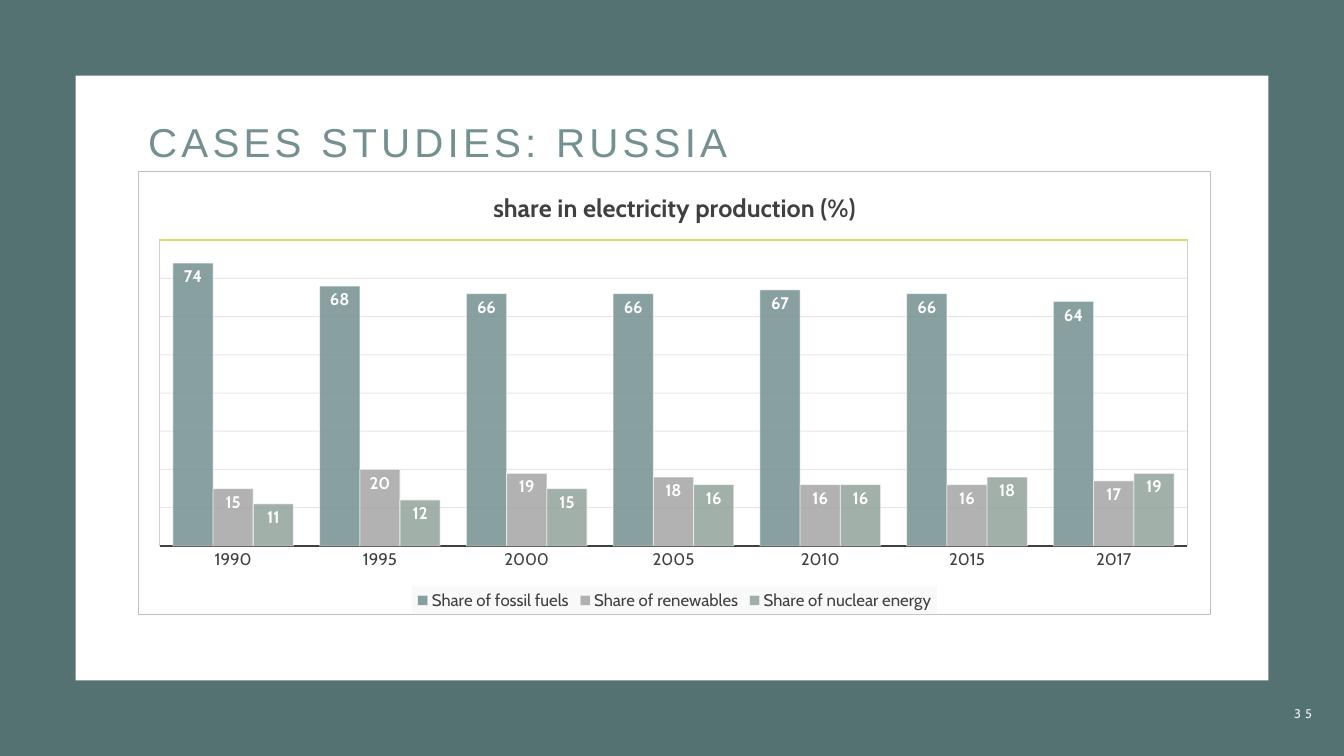
from dataclasses import dataclass

from lxml.etree import SubElement
from pptx import Presentation
from pptx.chart.data import CategoryChartData
from pptx.dml.color import RGBColor
from pptx.enum.chart import XL_CHART_TYPE as ChartType
from pptx.enum.chart import XL_LABEL_POSITION as LabelPosition
from pptx.enum.chart import XL_LEGEND_POSITION as LegendPosition
from pptx.enum.chart import XL_TICK_LABEL_POSITION as TickLabels
from pptx.enum.chart import XL_TICK_MARK as TickMark
from pptx.enum.shapes import MSO_CONNECTOR as Connector
from pptx.enum.shapes import MSO_SHAPE as Shape
from pptx.enum.text import MSO_ANCHOR as Anchor
from pptx.enum.text import MSO_AUTO_SIZE as AutoSize
from pptx.enum.text import PP_ALIGN as Align
from pptx.oxml import parse_xml
from pptx.oxml.ns import nsdecls, qn
from pptx.util import Inches, Pt


@dataclass(frozen=True)
class Theme:
    heading_font: str = "Arial"
    body_font: str = "Cabin"
    frame: str = "557272"
    paper: str = "FFFFFF"
    heading: str = "749090"
    number: str = "EEF2F0"
    text: str = "404040"
    border: str = "BFBFBF"
    plot_border: str = "D0D0D0"
    grid: str = "0D0D0D"
    legend_fill: str = "F2F2F2"
    top_line: str = "E0D764"
    bars: tuple = ("749090", "A5A5A5", "91A39B")
    heading_size: float = 28.8
    chart_title_size: float = 18
    chart_size: float = 12
    number_size: float = 9


THEME = Theme()

YEARS = ("1990", "1995", "2000", "2005", "2010", "2015", "2017")
SHARES = {
    "Share of fossil fuels": (74, 68, 66, 66, 67, 66, 64),
    "Share of renewables": (15, 20, 19, 18, 16, 16, 17),
    "Share of nuclear energy": (11, 12, 15, 16, 16, 18, 19),
}
CHART_BOX = (1.37, 1.7, 10.64, 4.4)
PLOT_BOX = (1.58, 2.38, 10.2, 3.04)


def style_font(font, size, color, name=THEME.body_font, bold=False):
    font.name = name
    font.size = Pt(size)
    font.bold = bold
    font.color.rgb = RGBColor.from_string(color)


def set_spacing(run, points):
    run._r.get_or_add_rPr().set("spc", str(points * 100))


def paint(fill, color, opacity=100):
    fill.solid()
    fill.fore_color.rgb = RGBColor.from_string(color)
    if opacity < 100:
        color_element = fill._xPr.find(qn("a:solidFill"))[0]
        SubElement(color_element, qn("a:alpha"), val=str(opacity * 1000))


def draw_line(line, color, width, opacity=100):
    line.width = Pt(width)
    paint(line.fill, color, opacity)


def add_panel(slide, box, color):
    panel = slide.shapes.add_shape(Shape.RECTANGLE, *map(Inches, box))
    panel.shadow.inherit = False
    paint(panel.fill, color)
    panel.line.fill.background()


def set_title(slide, text, box):
    title = slide.shapes.title
    title.left, title.top, title.width, title.height = map(Inches, box)
    frame = title.text_frame
    frame.text = text
    frame.auto_size = AutoSize.NONE
    frame.vertical_anchor = Anchor.MIDDLE
    paragraph = frame.paragraphs[0]
    paragraph.alignment = Align.LEFT
    paragraph.line_spacing = 0.9
    run = paragraph.runs[0]
    style_font(run.font, THEME.heading_size, THEME.heading, THEME.heading_font)
    set_spacing(run, 3)
    slide.shapes._spTree.append(title._element)  # in front of the panels


def add_slide_number(slide, text, box):
    frame = slide.shapes.add_textbox(*map(Inches, box)).text_frame
    frame.word_wrap = True
    frame.text = text
    paragraph = frame.paragraphs[0]
    paragraph.alignment = Align.RIGHT
    paragraph.space_after = Pt(6)
    run = paragraph.runs[0]
    style_font(run.font, THEME.number_size, THEME.number)
    set_spacing(run, 3)


def box_properties(line_color=None, fill_color=None, opacity=100):
    """Make the c:spPr of a chart part that python-pptx cannot format."""
    fill = "<a:noFill/>"
    if fill_color:
        fill = (f'<a:solidFill><a:srgbClr val="{fill_color}">'
                f'<a:alpha val="{opacity * 1000}"/></a:srgbClr></a:solidFill>')
    line = "<a:ln><a:noFill/></a:ln>"
    if line_color:
        line = (f'<a:ln w="{Pt(0.75)}"><a:solidFill>'
                f'<a:srgbClr val="{line_color}"/></a:solidFill></a:ln>')
    return parse_xml(f'<c:spPr {nsdecls("c", "a")}>{fill}{line}</c:spPr>')


def place_plot(plot_area):
    """Fix the inner plot area at PLOT_BOX, in fractions of the chart."""
    for layout in plot_area.findall(qn("c:layout")):
        plot_area.remove(layout)
    left, top, width, height = CHART_BOX
    plot_left, plot_top, plot_width, plot_height = PLOT_BOX
    settings = {
        "layoutTarget": "inner", "xMode": "edge", "yMode": "edge",
        "x": (plot_left - left) / width, "y": (plot_top - top) / height,
        "w": plot_width / width, "h": plot_height / height,
    }
    layout = parse_xml(f'<c:layout {nsdecls("c")}/>')
    manual = SubElement(layout, qn("c:manualLayout"))
    for name, value in settings.items():
        SubElement(manual, qn(f"c:{name}"), val=str(value))
    plot_area.insert(0, layout)


def style_series(series, color):
    paint(series.format.fill, color, 85)
    draw_line(series.format.line, THEME.paper, 0.75, 50)
    series.invert_if_negative = False
    labels = series.data_labels
    labels.show_value = True
    labels.position = LabelPosition.INSIDE_END
    style_font(labels.font, THEME.chart_size, THEME.paper, bold=True)


def style_axes(chart):
    category_axis = chart.category_axis
    category_axis.major_tick_mark = TickMark.NONE
    category_axis.tick_label_position = TickLabels.NEXT_TO_AXIS
    style_font(category_axis.tick_labels.font, THEME.chart_size, THEME.text)
    draw_line(category_axis.format.line, THEME.text, 1.5)
    value_axis = chart.value_axis
    value_axis.minimum_scale, value_axis.maximum_scale = 0, 80
    value_axis.major_unit = 10
    value_axis.visible = False
    draw_line(value_axis.major_gridlines.format.line, THEME.grid, 0.75, 10)


def add_share_chart(slide, title):
    data = CategoryChartData()
    data.categories = YEARS
    for name, values in SHARES.items():
        data.add_series(name, values)
    chart = slide.shapes.add_chart(
        ChartType.COLUMN_CLUSTERED, *map(Inches, CHART_BOX), data).chart
    style_font(chart.font, THEME.chart_size, THEME.text)

    title_frame = chart.chart_title.text_frame
    title_frame.text = title
    style_font(title_frame.paragraphs[0].runs[0].font,
               THEME.chart_title_size, THEME.text, bold=True)
    chart.chart_title.include_in_layout = False

    chart.has_legend = True
    chart.legend.position = LegendPosition.BOTTOM
    chart.legend.include_in_layout = False
    style_font(chart.legend.font, THEME.chart_size, THEME.text)

    plot = chart.plots[0]
    plot.gap_width = 65
    plot.overlap = 0
    plot.vary_by_categories = False
    for series, color in zip(plot.series, THEME.bars):
        style_series(series, color)
    style_axes(chart)

    chart_space = chart._chartSpace
    plot_area = chart_space.chart.plotArea
    place_plot(plot_area)
    plot_area.append(box_properties(THEME.plot_border))
    chart_space.chart.addnext(box_properties(THEME.border))
    overlay = chart.legend._element.find(qn("c:overlay"))
    overlay.addnext(box_properties(fill_color=THEME.legend_fill, opacity=39))


def add_plot_top_line(slide):
    left, top, width, _ = PLOT_BOX
    line = slide.shapes.add_connector(
        Connector.STRAIGHT, *map(Inches, (left, top, left + width, top)))
    draw_line(line.line, THEME.top_line, 1)
    SubElement(line._element.spPr, qn("a:effectLst"))


def main():
    presentation = Presentation()
    presentation.slide_width = Inches(13.33)
    presentation.slide_height = Inches(7.5)
    slide = presentation.slides.add_slide(presentation.slide_layouts[5])
    add_panel(slide, (0, 0, 13.33, 7.5), THEME.frame)
    add_panel(slide, (0.75, 0.75, 11.83, 6), THEME.paper)
    set_title(slide, "CASES STUDIES: RUSSIA", (1.37, 1.17, 10.51, 0.52))
    add_slide_number(slide, "35", (12.16, 6.95, 0.95, 0.4))
    add_share_chart(slide, "share in electricity production (%)")
    add_plot_top_line(slide)
    presentation.save("out.pptx")


if __name__ == "__main__":
    main()
